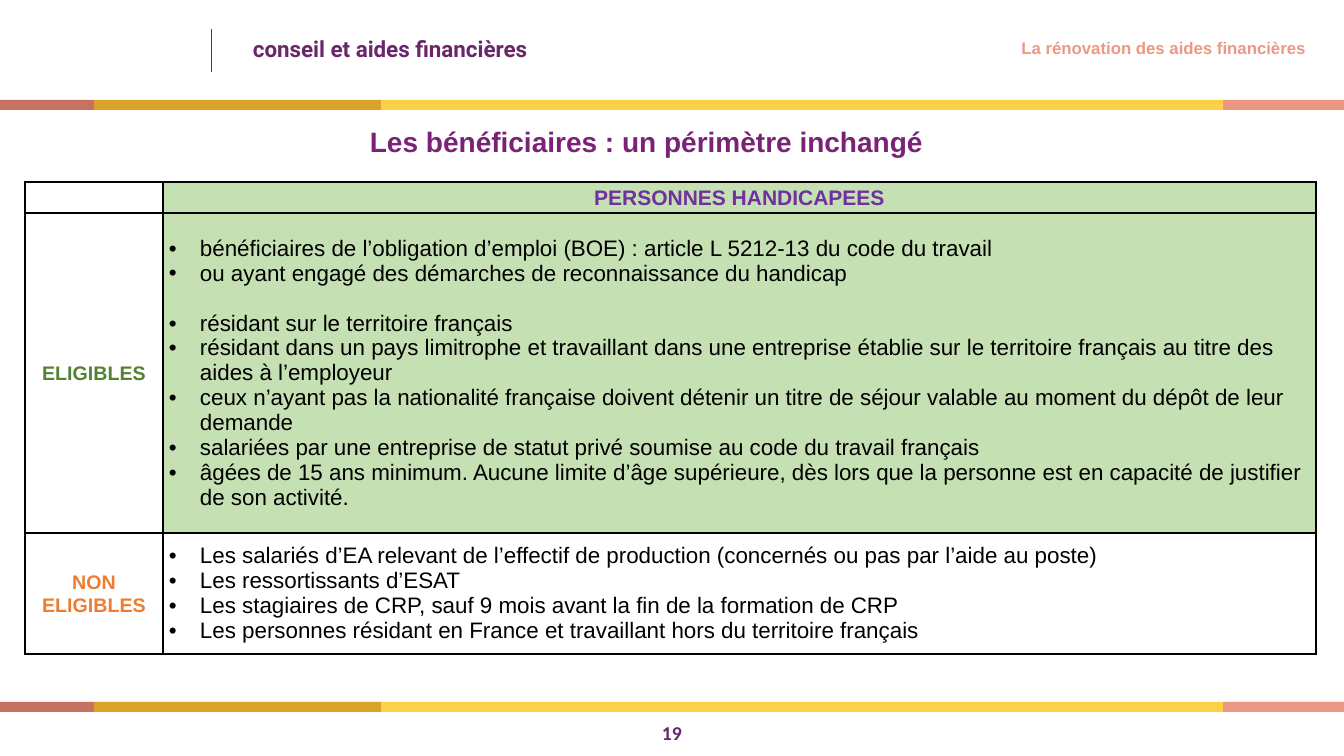
from lxml.etree import SubElement
from pptx import Presentation
from pptx.dml.color import RGBColor
from pptx.enum.shapes import MSO_CONNECTOR, MSO_SHAPE
from pptx.enum.text import MSO_ANCHOR, PP_ALIGN
from pptx.oxml.ns import qn
from pptx.util import Pt

PIXEL = 914400 / 100.8
COLORS = {
    "plum": "69276A", "title": "792276", "salmon": "EC9883", "black": "000000",
    "violet": "7030A0", "green": "548235", "orange": "ED7D31", "mint": "C5E0B3",
    "brick": "C77160", "ochre": "DAA226", "yellow": "FCD145", "coral": "EC9783",
}
BAND = [("brick", 0, 94), ("ochre", 94, 381), ("yellow", 381, 1223), ("coral", 1223, 1344)]
ELIGIBLE = [
    "bénéficiaires de l’obligation d’emploi (BOE) : article L 5212-13 du code du travail",
    "ou ayant engagé des démarches de reconnaissance du handicap",
    "résidant sur le territoire français",
    "résidant dans un pays limitrophe et travaillant dans une entreprise établie sur le "
    "territoire français au titre des aides à l’employeur",
    "ceux n’ayant pas la nationalité française doivent détenir un titre de séjour valable "
    "au moment du dépôt de leur demande",
    "salariées par une entreprise de statut privé soumise au code du travail français",
    "âgées de 15 ans minimum. Aucune limite d’âge supérieure, dès lors que la personne est "
    "en capacité de justifier de son activité.",
]
NOT_ELIGIBLE = [
    "Les salariés d’EA relevant de l’effectif de production (concernés ou pas par l’aide au poste)",
    "Les ressortissants d’ESAT",
    "Les stagiaires de CRP, sauf 9 mois avant la fin de la formation de CRP",
    "Les personnes résidant en France et travaillant hors du territoire français",
]


def px(length):
    return round(length * PIXEL)


def color(name):
    return RGBColor.from_string(COLORS[name])


class SlideBuilder:
    """Draws styled elements on one slide, with lengths in pixels."""

    def __init__(self, slide):
        self.slide = slide
        self.shapes = slide.shapes

    def style(self, paragraph, size, ink, bold=True, font="Arial", align=PP_ALIGN.LEFT, spacing=0.9):
        paragraph.alignment = align
        paragraph.line_spacing = spacing
        for span in paragraph.runs:
            span.font.name = font
            span.font.size = Pt(size)
            span.font.bold = bold
            span.font.color.rgb = color(ink)

    def rectangle(self, left, top, width, height, fill):
        shape = self.shapes.add_shape(MSO_SHAPE.RECTANGLE, px(left), px(top), px(width), px(height))
        shape.shadow.inherit = False
        shape.fill.solid()
        shape.fill.fore_color.rgb = color(fill)
        shape.line.fill.background()

    def band(self, top):
        for fill, start, end in BAND:
            self.rectangle(start, top, end - start, 10, fill)

    def vertical_line(self, left, top, bottom, ink):
        line = self.shapes.add_connector(MSO_CONNECTOR.STRAIGHT, px(left), px(top), px(left), px(bottom))
        line.line.color.rgb = color(ink)
        line.line.width = Pt(0.5)
        SubElement(line._element.spPr, qn("a:effectLst"))

    def text(self, content, left, top, width, height, size, ink, anchor=MSO_ANCHOR.TOP, **look):
        box = self.shapes.add_textbox(px(left), px(top), px(width), px(height))
        frame = box.text_frame
        frame.word_wrap = True
        frame.vertical_anchor = anchor
        frame.text = content
        self.style(frame.paragraphs[0], size, ink, **look)

    def table(self, left, top, columns, rows):
        frame = self.shapes.add_table(
            len(rows), len(columns), px(left), px(top), px(sum(columns)), px(sum(rows)))
        table = frame.table
        for column, width in zip(table.columns, columns):
            column.width = px(width)
        for row, height in zip(table.rows, rows):
            row.height = px(height)
            for cell in row.cells:
                self.cell_frame(cell)
        return table

    def cell_frame(self, cell):
        cell.margin_left = cell.margin_right = px(6)
        cell.margin_top = cell.margin_bottom = 0
        cell.vertical_anchor = MSO_ANCHOR.MIDDLE
        cell.text_frame.paragraphs[0].font.size = Pt(14)
        cell.fill.background()
        properties = cell._tc.get_or_add_tcPr()
        for index, side in enumerate(("a:lnL", "a:lnR", "a:lnT", "a:lnB")):
            border = SubElement(properties, qn(side), w=str(Pt(1)))
            fill = SubElement(border, qn("a:solidFill"))
            SubElement(fill, qn("a:srgbClr"), val=COLORS["black"])
            properties.insert(index, border)

    def cell_fill(self, cell, fill):
        cell.fill.solid()
        cell.fill.fore_color.rgb = color(fill)

    def cell_label(self, cell, content, size, ink):
        cell.text_frame.text = content
        self.style(cell.text_frame.paragraphs[0], size, ink, align=PP_ALIGN.CENTER, spacing=1.07)

    def cell_bullets(self, cell, items, gap_before=None):
        cell.text_frame.text = "\n".join(items)
        for index, paragraph in enumerate(cell.text_frame.paragraphs):
            properties = paragraph._p.get_or_add_pPr()
            properties.set("marL", str(px(31)))
            properties.set("indent", str(px(-31)))
            SubElement(properties, qn("a:buFont"), typeface="Arial")
            SubElement(properties, qn("a:buChar"), char="•")
            self.style(paragraph, 16, "black", bold=False, spacing=1.0)
            if index == gap_before:
                paragraph.space_before = Pt(18)


def main():
    deck = Presentation()
    deck.slide_width, deck.slide_height = px(1344), px(756)
    page = SlideBuilder(deck.slides.add_slide(deck.slide_layouts[6]))

    page.vertical_line(211, 29, 72, "plum")
    page.text("conseil et aides financières", 243, 38, 560, 25, 16, "plum",
              anchor=MSO_ANCHOR.MIDDLE, font="Roboto")
    page.text("19", 652, 718, 55, 32, 14, "plum", anchor=MSO_ANCHOR.MIDDLE, font="Calibri")
    for top in (100, 702):
        page.band(top)
    page.text("La rénovation des aides financières", 744, 35, 572, 29, 12, "salmon",
              align=PP_ALIGN.RIGHT)
    page.text("Les bénéficiaires : un périmètre inchangé", 360, 123, 835, 46, 20, "title",
              align=PP_ALIGN.JUSTIFY)

    table = page.table(25, 182, [138, 1153], [31, 320, 121])
    for row in (0, 1):
        page.cell_fill(table.cell(row, 1), "mint")
    page.cell_label(table.cell(0, 1), "PERSONNES HANDICAPEES", 15, "violet")
    page.cell_label(table.cell(1, 0), "ELIGIBLES", 14, "green")
    page.cell_label(table.cell(2, 0), "NON ELIGIBLES", 14, "orange")
    page.cell_bullets(table.cell(1, 1), ELIGIBLE, gap_before=2)
    page.cell_bullets(table.cell(2, 1), NOT_ELIGIBLE)

    deck.save("out.pptx")


if __name__ == "__main__":
    main()
